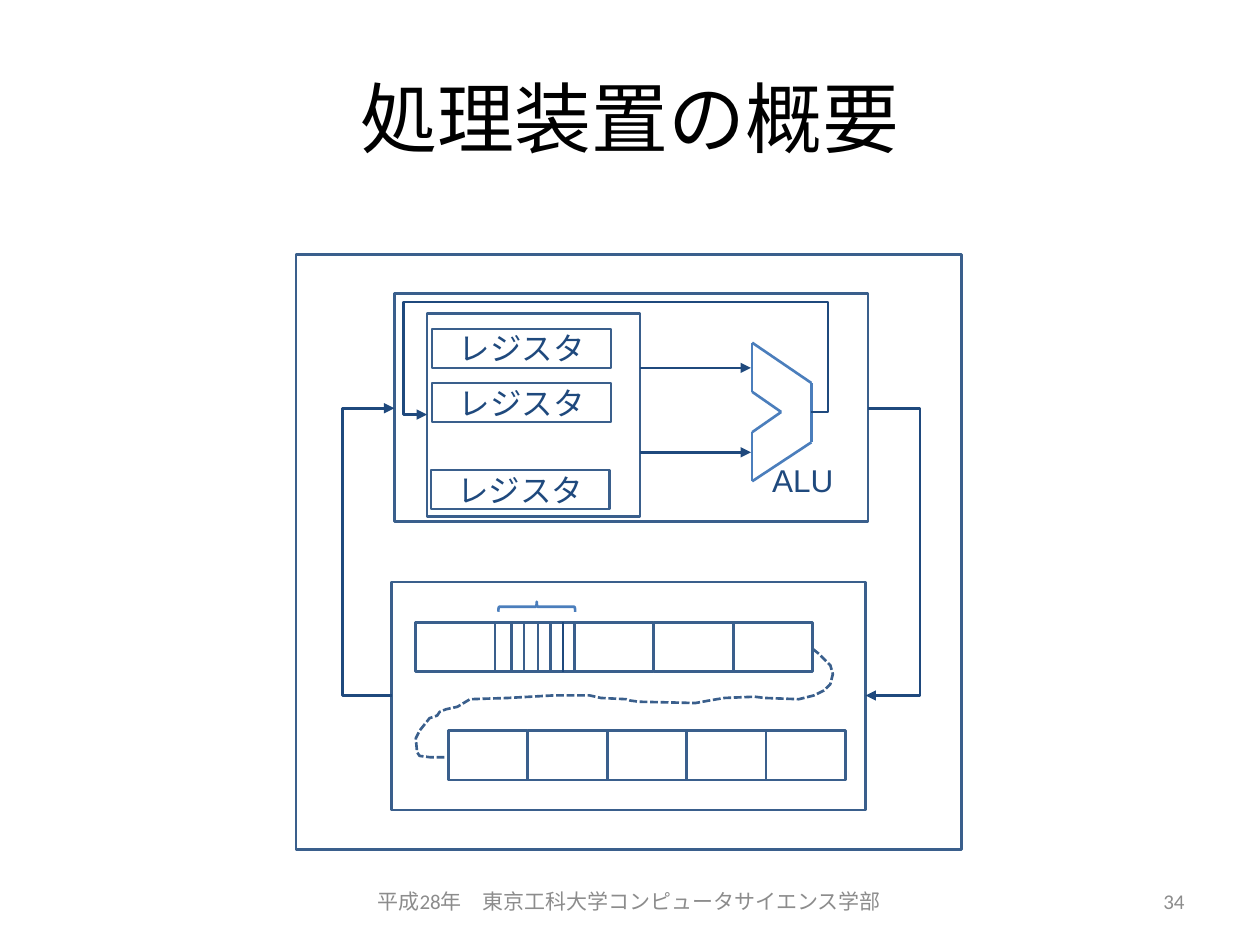
from lxml.etree import SubElement
from pptx import Presentation
from pptx.dml.color import RGBColor
from pptx.enum.dml import MSO_LINE
from pptx.enum.shapes import MSO_CONNECTOR, MSO_SHAPE
from pptx.enum.text import MSO_ANCHOR, PP_ALIGN
from pptx.oxml.ns import qn
from pptx.util import Inches, Pt

COLORS = {
    "paper": "FFFFFF",
    "title": "000000",
    "footer": "8C8C8C",
    "outline": "3A5F8C",
    "flow": "1F497D",
    "unit": "4B7EBC",
}
COLUMNS, ROWS = 100, 75
WIDTH, HEIGHT = Inches(10), Inches(7.5)


def color(name):
    return RGBColor.from_string(COLORS[name])


def write(box, text, size=18, font="Calibri", ink="flow",
          align=PP_ALIGN.CENTER, anchor=MSO_ANCHOR.MIDDLE, spacing=None):
    frame = box.text_frame
    frame.word_wrap = True
    frame.vertical_anchor = anchor
    para = frame.paragraphs[0]
    para.alignment = align
    para.line_spacing = spacing
    span = para.add_run()
    span.text = text
    span.font.size = Pt(size)
    span.font.name = font
    span.font.color.rgb = color(ink)


class Diagram:
    def __init__(self, page, weight=1.5):
        self.shapes = page.shapes
        self.weight = Pt(weight)

    def x(self, columns):
        return round(WIDTH * columns / COLUMNS)

    def y(self, rows):
        return round(HEIGHT * rows / ROWS)

    def place(self, left, top, width, height):
        return self.x(left), self.y(top), self.x(width), self.y(height)

    def stroke(self, item, ink):
        item.line.color.rgb = color(ink)
        item.line.width = self.weight

    def label(self, area, text, **style):
        write(self.shapes.add_textbox(*self.place(*area)), text, **style)

    def box(self, area, fill=None, ink="outline", kind=MSO_SHAPE.RECTANGLE):
        shape = self.shapes.add_shape(kind, *self.place(*area))
        shape.shadow.inherit = False
        if fill:
            shape.fill.solid()
            shape.fill.fore_color.rgb = color(fill)
        else:
            shape.fill.background()
        self.stroke(shape, ink)
        return shape

    def line(self, start, end, ink="flow", arrow=False, kind=MSO_CONNECTOR.STRAIGHT):
        link = self.shapes.add_connector(
            kind, self.x(start[0]), self.y(start[1]), self.x(end[0]), self.y(end[1]))
        self.stroke(link, ink)
        if arrow:
            SubElement(link.line._get_or_add_ln(), qn("a:tailEnd"), type="triangle")
        SubElement(link._element.spPr, qn("a:effectLst"))
        return link

    def elbow(self, start, end, *bends):
        link = self.line(start, end, arrow=True, kind=MSO_CONNECTOR.ELBOW)
        geometry = link._element.spPr.find(qn("a:prstGeom"))
        geometry.set("prst", f"bentConnector{len(bends) + 2}")
        guides = geometry.find(qn("a:avLst"))
        if guides is None:
            guides = SubElement(geometry, qn("a:avLst"))
        for index, bend in enumerate(bends):
            axis = index % 2
            share = (bend - start[axis]) / (end[axis] - start[axis])
            SubElement(guides, qn("a:gd"), name=f"adj{index + 1}",
                       fmla=f"val {round(share * 100000)}")

    def dashed_path(self, points):
        places = [(self.x(column), self.y(row)) for column, row in points]
        builder = self.shapes.build_freeform(*places[0])
        builder.add_line_segments(places[1:], close=False)
        path = builder.convert_to_shape()
        path.shadow.inherit = False
        path.fill.background()
        self.stroke(path, "outline")
        path.line.dash_style = MSO_LINE.SQUARE_DOT


def draw_processor(diagram):
    for left, top in ((34.3, 26.1), (34.3, 30.4), (34.2, 37.3)):
        write(diagram.box((left, top, 14.2, 3.1), fill="paper"), "レジスタ")

    diagram.elbow((31.1, 55.2), (31.3, 32.4), 27.2)
    diagram.elbow((68.9, 32.4), (68.7, 55.2), 73)

    alu = [(59.7, 31.1), (59.7, 27.2), (64.4, 30.4), (64.4, 35.1),
           (59.7, 38.2), (59.7, 34.3), (62, 32.7), (59.7, 31.1)]
    for start, end in zip(alu, alu[1:]):
        diagram.line(start, end, ink="unit")

    diagram.box((33.9, 24.9, 16.9, 16.1))
    for row in (29.2, 35.9):
        diagram.line((50.8, row), (59.6, row), arrow=True)
    diagram.elbow((64.4, 32.7), (33.9, 32.9), 65.7, 24, 32)
    diagram.label((60.3, 36.3, 7.1, 3.9), "ALU", font="Arial",
                  align=PP_ALIGN.LEFT, anchor=MSO_ANCHOR.TOP, spacing=0.95)


def draw_memory(diagram):
    cell_width, cell_height = 6.3, 3.9
    for left, top in ((33, 49.4), (35.6, 58)):
        for index in range(5):
            diagram.box((left + index * cell_width, top, cell_width, cell_height))

    diagram.dashed_path([
        (64.5, 51.5), (65, 51.9), (65.4, 52.3), (65.9, 52.8), (66.1, 53.5),
        (65.9, 54.3), (65.4, 54.8), (64.6, 55.2), (63.4, 55.5), (60.7, 55.4),
        (59.9, 55.3), (57.5, 55.4), (56.3, 55.6), (55.2, 55.8), (50.7, 55.7),
        (50, 55.6), (49.7, 55.5), (47.7, 55.4), (46.8, 55.2), (43.9, 55.2),
        (40.3, 55.4), (37.3, 55.5), (36.8, 55.8), (36.3, 56.1), (35.4, 56.3),
        (34.9, 56.5), (34.7, 56.8), (34.1, 57), (33.3, 58), (33, 58.6),
        (33.1, 59.7), (33.3, 60), (34.1, 60.1), (35.4, 60.1)])

    for left in (40.6, 42.7):
        diagram.box((left, 49.4, 1, cell_height))
    diagram.line((44.7, 49.4), (44.7, 53.3))
    brace = diagram.box((42.2, 45.1, 0.8, 6.1), ink="unit", kind=MSO_SHAPE.RIGHT_BRACE)
    brace.rotation = 270


def main():
    deck = Presentation()
    deck.slide_width, deck.slide_height = WIDTH, HEIGHT
    page = deck.slides.add_slide(deck.slide_layouts[6])
    diagram = Diagram(page)

    diagram.label((5, 3, 90, 12.5), "処理装置の概要", size=44, ink="title")
    diagram.label((28.3, 69.5, 43.3, 4), "平成28年　東京工科大学コンピュータサイエンス学部",
                  size=12, ink="footer")
    diagram.label((71.7, 69.5, 23.3, 4), "34", size=12, ink="footer",
                  align=PP_ALIGN.RIGHT)

    for area in ((23.5, 20.2, 52.8, 47.2), (31.3, 23.3, 37.6, 18.1),
                 (31.1, 46.2, 37.6, 18.1)):
        diagram.box(area, fill="paper")
    draw_processor(diagram)
    draw_memory(diagram)
    deck.save("out.pptx")


if __name__ == "__main__":
    main()
